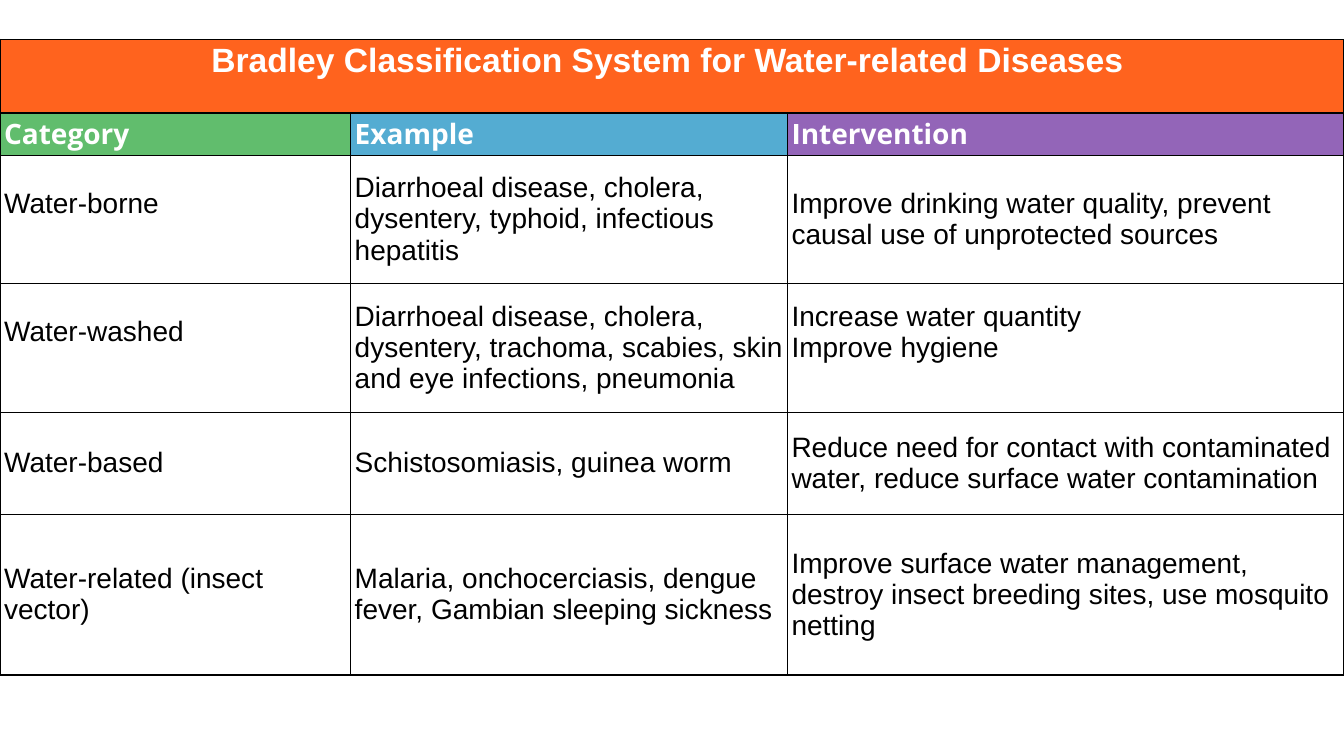
from dataclasses import dataclass

from lxml.etree import SubElement
from pptx import Presentation
from pptx.dml.color import RGBColor
from pptx.enum.text import MSO_ANCHOR as Anchor, PP_ALIGN as Align
from pptx.oxml.ns import qn
from pptx.table import _Cell as Cell
from pptx.util import Pt


@dataclass(frozen=True)
class Theme:
    orange: str = "FF631E"
    green: str = "61BD6D"
    blue: str = "54ACD2"
    purple: str = "9365B8"
    white: str = "FFFFFF"
    black: str = "000000"
    body_font: str = "Arial"
    heading_font: str = "Open Sans"
    title_size: float = 24
    text_size: float = 20
    border: float = 1
    side_margin: float = 2.9
    edge_margin: float = 1.45
    lift: float = 22.4  # extra bottom margin that raises a text


@dataclass(frozen=True)
class Style:
    fill: str
    color: str
    font: str
    size: float
    bold: bool = False
    align: Align = Align.LEFT


@dataclass(frozen=True)
class Entry:
    text: str
    raised: bool = False


THEME = Theme()
TITLE_STYLE = Style(THEME.orange, THEME.white, THEME.body_font,
                    THEME.title_size, True, Align.CENTER)
HEADING_STYLES = [
    Style(fill, THEME.white, THEME.heading_font, THEME.text_size, True)
    for fill in (THEME.green, THEME.blue, THEME.purple)
]
BODY_STYLE = Style(THEME.white, THEME.black, THEME.body_font, THEME.text_size)

TABLE_TOP = 28.2
COLUMN_WIDTHS = [250.5, 312, 397.5]
ROW_HEIGHTS = [52.5, 30, 91.4, 92.2, 72.8, 115]

TITLE = Entry("Bradley Classification System for Water-related Diseases ", True)
HEADINGS = [Entry("Category"), Entry("Example"), Entry("Intervention")]
DISEASES = [
    [Entry("Water-borne", True),
     Entry("Diarrhoeal disease, cholera, dysentery, typhoid, infectious hepatitis"),
     Entry("Improve drinking water quality, prevent causal use of unprotected sources")],
    [Entry("Water-washed", True),
     Entry("Diarrhoeal disease, cholera, dysentery, trachoma, scabies, "
           "skin and eye infections, pneumonia"),
     Entry("Increase water quantity\nImprove hygiene", True)],
    [Entry("Water-based"),
     Entry("Schistosomiasis, guinea worm"),
     Entry("Reduce need for contact with contaminated water, "
           "reduce surface water contamination")],
    [Entry("Water-related (insect vector)"),
     Entry("Malaria, onchocerciasis, dengue fever, Gambian sleeping sickness"),
     Entry("Improve surface water management, destroy insect breeding sites, "
           "use mosquito netting")],
]


def draw_borders(cell: Cell) -> None:
    properties = cell._tc.get_or_add_tcPr()
    for position, side in enumerate(("lnL", "lnR", "lnT", "lnB")):
        line = SubElement(properties, qn(f"a:{side}"), w=str(Pt(THEME.border)))
        fill = SubElement(line, qn("a:solidFill"))
        SubElement(fill, qn("a:srgbClr"), val=THEME.black)
        properties.insert(position, line)  # borders precede the fill


def format_cell(cell: Cell, style: Style) -> None:
    cell.fill.solid()
    cell.fill.fore_color.rgb = RGBColor.from_string(style.fill)
    draw_borders(cell)


def write_entry(cell: Cell, entry: Entry, style: Style) -> None:
    cell.vertical_anchor = Anchor.MIDDLE
    cell.margin_left = cell.margin_right = Pt(THEME.side_margin)
    cell.margin_top = Pt(THEME.edge_margin)
    cell.margin_bottom = Pt(THEME.edge_margin + THEME.lift * entry.raised)
    paragraph = cell.text_frame.paragraphs[0]
    paragraph.alignment = style.align
    for number, words in enumerate(entry.text.split("\n")):
        if number:
            paragraph.add_line_break()
        run = paragraph.add_run()
        run.text = words
        run.font.name = style.font
        run.font.size = Pt(style.size)
        run.font.bold = style.bold
        run.font.color.rgb = RGBColor.from_string(style.color)


def main() -> None:
    presentation = Presentation()
    presentation.slide_width = Pt(960)
    presentation.slide_height = Pt(540)
    slide = presentation.slides.add_slide(presentation.slide_layouts[6])

    # Table grid
    classification = slide.shapes.add_table(
        len(ROW_HEIGHTS), len(COLUMN_WIDTHS), Pt(0), Pt(TABLE_TOP),
        Pt(sum(COLUMN_WIDTHS)), Pt(sum(ROW_HEIGHTS))).table
    classification.first_row = classification.horz_banding = False
    for column, width in zip(classification.columns, COLUMN_WIDTHS):
        column.width = Pt(width)
    for row, height in zip(classification.rows, ROW_HEIGHTS):
        row.height = Pt(height)

    # Title band across all columns
    title_cells = list(classification.rows[0].cells)
    for cell in title_cells:
        format_cell(cell, TITLE_STYLE)
    title_cells[0].merge(title_cells[-1])
    write_entry(title_cells[0], TITLE, TITLE_STYLE)

    # Headings and disease categories
    body_styles = [BODY_STYLE] * len(COLUMN_WIDTHS)
    styled_rows = [(HEADINGS, HEADING_STYLES)]
    styled_rows += [(entries, body_styles) for entries in DISEASES]
    for row_number, (entries, styles) in enumerate(styled_rows, start=1):
        cells = classification.rows[row_number].cells
        for cell, entry, style in zip(cells, entries, styles):
            format_cell(cell, style)
            write_entry(cell, entry, style)

    presentation.save("out.pptx")


if __name__ == "__main__":
    main()
